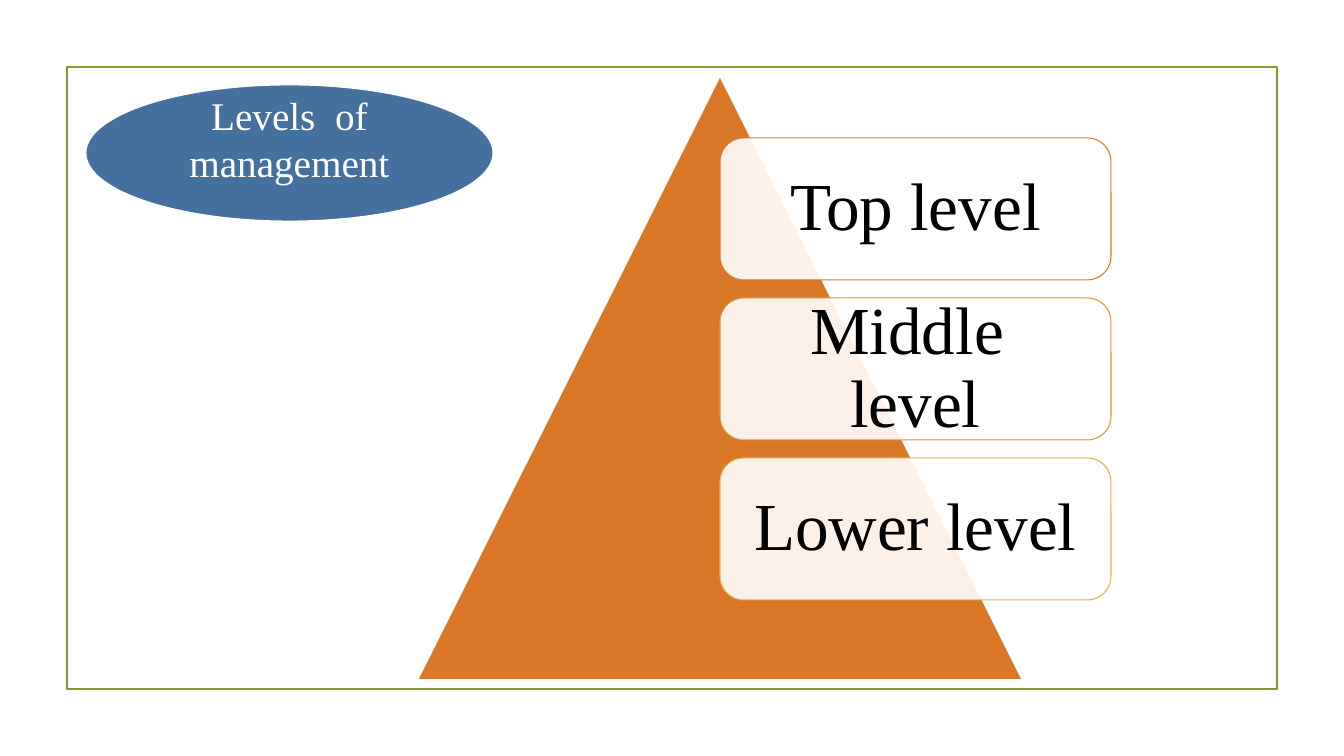
import pptx
import pptx.dml.color
import pptx.enum.shapes
import pptx.enum.text
import pptx.oxml
import pptx.oxml.ns
import pptx.util

RGBColor = pptx.dml.color.RGBColor
MSO_SHAPE = pptx.enum.shapes.MSO_SHAPE

PX = 914400 / 100.8
FONT = "Times New Roman"
WHITE = RGBColor(0xFF, 0xFF, 0xFF)
BLACK = RGBColor(0x00, 0x00, 0x00)
OLIVE = RGBColor(0x83, 0x99, 0x2A)
BLUE = RGBColor(0x44, 0x70, 0x9D)
ORANGE = RGBColor(0xD9, 0x78, 0x28)
AMBER = RGBColor(0xDC, 0x97, 0x34)
GOLD = RGBColor(0xDE, 0xB3, 0x40)

LEVELS = [("Top level", ORANGE), ("Middle  level", AMBER), ("Lower level", GOLD)]


def px(length):
    return pptx.util.Emu(round(length * PX))


def add_preset(slide, preset, box, fill=None, opacity=100, line=None, line_width=1):
    shape = slide.shapes.add_shape(preset, *map(px, box))
    shape.shadow.inherit = False
    if fill is None:
        shape.fill.background()
    else:
        shape.fill.solid()
        shape.fill.fore_color.rgb = fill
        if opacity < 100:
            color = shape.fill._xPr.find(".//" + pptx.oxml.ns.qn("a:srgbClr"))
            alpha = pptx.oxml.parse_xml(
                f'<a:alpha {pptx.oxml.ns.nsdecls("a")} val="{opacity * 1000}"/>')
            color.append(alpha)
    if line is None:
        shape.line.fill.background()
    else:
        shape.line.color.rgb = line
        shape.line.width = pptx.util.Pt(line_width)
    return shape


def write(shape, text, size, color, margins, line_spacing=1.0):
    """Write centred text; margins are left, top, right and bottom in px."""
    frame = shape.text_frame
    frame.word_wrap = True
    frame.vertical_anchor = pptx.enum.text.MSO_ANCHOR.MIDDLE
    (frame.margin_left, frame.margin_top,
     frame.margin_right, frame.margin_bottom) = map(px, margins)
    paragraph = frame.paragraphs[0]
    paragraph.alignment = pptx.enum.text.PP_ALIGN.CENTER
    paragraph.line_spacing = line_spacing
    run = paragraph.add_run()
    run.text = text
    run.font.name = FONT
    run.font.size = pptx.util.Pt(size)
    run.font.color.rgb = color


def add_title(slide, box):
    ellipse = add_preset(slide, MSO_SHAPE.OVAL, box, fill=BLUE, line=WHITE, line_width=2)
    write(ellipse, "Levels  of management", 28, WHITE, (10, 5, 10, 34))


def add_pyramid(slide, box):
    """Draw the triangle, with level cards starting at its vertical axis."""
    left, top, width, height = box
    add_preset(slide, MSO_SHAPE.ISOSCELES_TRIANGLE, box, fill=ORANGE)
    card_left = left + width // 2
    card_width = round(width * 0.65)
    first_top, card_height, gap = top + height // 10, 142, 18
    for index, (level, outline) in enumerate(LEVELS):
        card_top = first_top + index * (card_height + gap)
        card = add_preset(slide, MSO_SHAPE.ROUNDED_RECTANGLE,
                          (card_left, card_top, card_width, card_height),
                          fill=WHITE, opacity=90, line=outline, line_width=0.75)
        write(card, level, 48, BLACK, (20, 20, 20, 20), line_spacing=0.9)


def main():
    deck = pptx.Presentation()
    deck.slide_width, deck.slide_height = px(1344), px(756)
    slide = deck.slides.add_slide(deck.slide_layouts[6])
    add_preset(slide, MSO_SHAPE.RECTANGLE, (67, 67, 1210, 622),
               line=OLIVE, line_width=1.25)
    add_title(slide, (85, 84, 409, 138))
    add_pyramid(slide, (419, 78, 602, 601))
    deck.save("out.pptx")


if __name__ == "__main__":
    main()
